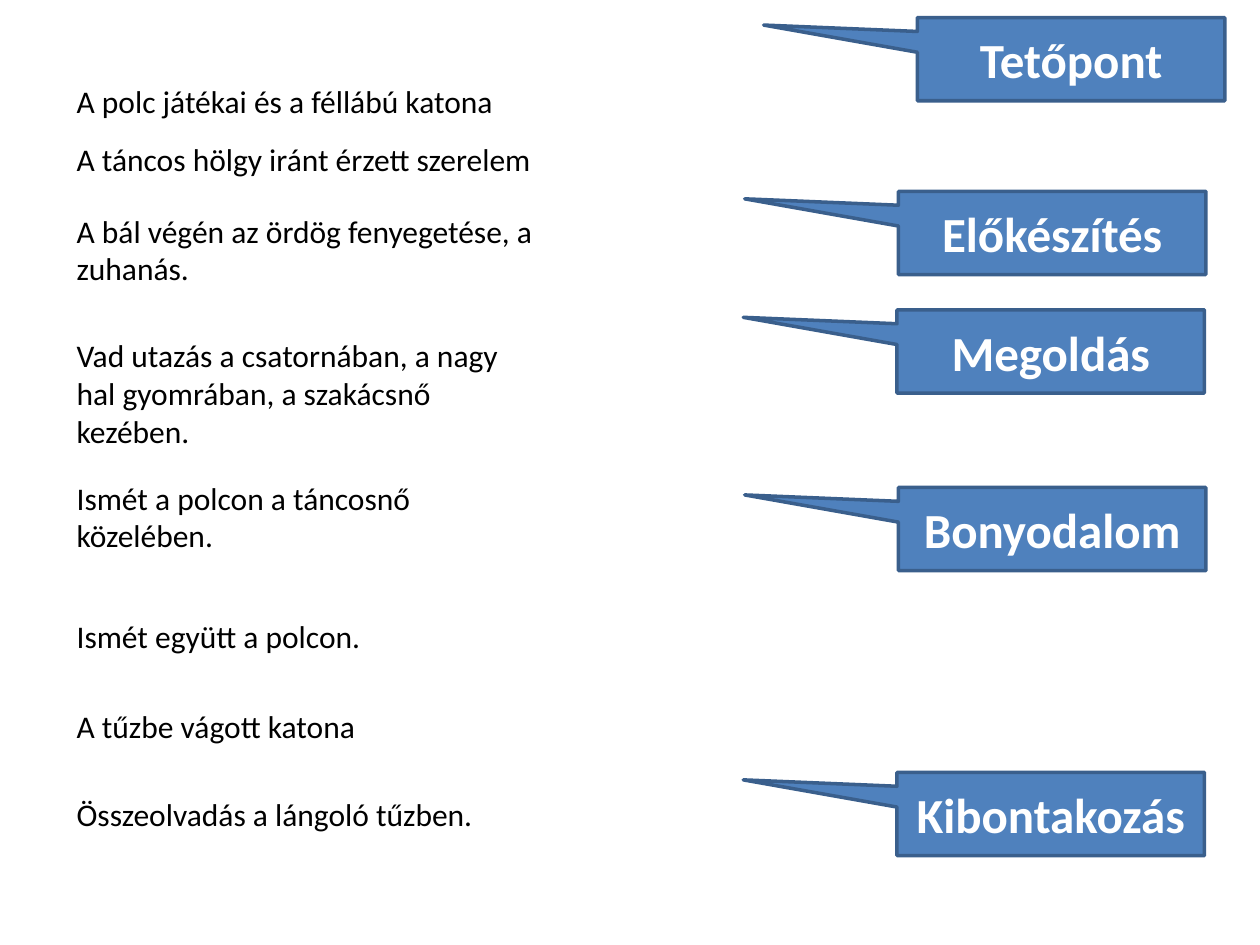
from dataclasses import dataclass

from pptx import Presentation
from pptx.dml.color import RGBColor
from pptx.enum.shapes import MSO_SHAPE
from pptx.enum.text import MSO_ANCHOR, MSO_AUTO_SIZE, PP_ALIGN
from pptx.util import Pt


@dataclass(frozen=True)
class Theme:
    """Colours, font and type sizes of the slide."""
    face: str = "Calibri"
    ink: RGBColor = RGBColor(0, 0, 0)
    pale: RGBColor = RGBColor(255, 255, 255)
    blue: RGBColor = RGBColor(0x4F, 0x81, 0xBD)
    edge: RGBColor = RGBColor(0x3A, 0x5F, 0x8C)
    body: int = 18
    label: int = 28


THEME = Theme()
EVENTS = [
    (0, 1, "A polc játékai és a féllábú katona"),
    (33.1, 1, "A táncos hölgy iránt érzett szerelem"),
    (74.2, 2, "A bál végén az ördög fenyegetése, a zuhanás."),
    (145.4, 3, "Vad utazás a csatornában, a nagy hal gyomrában, a szakácsnő kezében."),
    (226.8, 2, "Ismét a polcon a táncosnő közelében."),
    (306, 1, "Ismét együtt a polcon."),
    (357.1, 1, "A tűzbe vágott katona"),
    (407.5, 1, "Összeolvadás a lángoló tűzben."),
]
STAGES = [
    (0.8, 99.3, "Előkészítés"),
    (0.8, 268.5, "Bonyodalom"),
    (0, 431.3, "Kibontakozás"),
    (11.6, 0, "Tetőpont"),
    (0, 167, "Megoldás"),
]


def style(item, form):
    """Set each attribute of an item from a dict of format values."""
    for name, value in form.items():
        setattr(item, name, value)


def write(frame, text, font):
    """Put one formatted run into a text frame and return its paragraph."""
    para = frame.paragraphs[0]
    run = para.add_run()
    run.text = text
    style(run.font, {"name": THEME.face, "size": Pt(font["size"]), "bold": font["bold"]})
    run.font.color.rgb = font["ink"]
    return para


def add_events(slide, left, top, width):
    """Place the story events in a column."""
    font = {"size": THEME.body, "bold": False, "ink": THEME.ink}
    for down, lines, text in EVENTS:
        high = 7.2 + 21.8 * lines
        box = slide.shapes.add_textbox(Pt(left), Pt(top + down), Pt(width), Pt(high))
        style(box.text_frame, {"word_wrap": True,
                               "auto_size": MSO_AUTO_SIZE.SHAPE_TO_FIT_TEXT})
        write(box.text_frame, text, font)


def add_stages(slide, left, top, width, high):
    """Place the plot stage callouts, each pointing left."""
    font = {"size": THEME.label, "bold": True, "ink": THEME.pale}
    for right, down, text in STAGES:
        tag = slide.shapes.add_shape(MSO_SHAPE.RECTANGULAR_CALLOUT, Pt(left + right),
                                     Pt(top + down), Pt(width), Pt(high))
        tag.shadow.inherit = False
        tag.adjustments[0], tag.adjustments[1] = -1, -0.41
        tag.fill.solid()
        tag.fill.fore_color.rgb = THEME.blue
        tag.line.color.rgb = THEME.edge
        tag.line.width = Pt(2)
        style(tag.text_frame, {"word_wrap": True, "vertical_anchor": MSO_ANCHOR.MIDDLE})
        write(tag.text_frame, text, font).alignment = PP_ALIGN.CENTER


def main():
    """Build and save the slide."""
    deck = Presentation()
    style(deck, {"slide_width": Pt(720), "slide_height": Pt(540)})
    slide = deck.slides.add_slide(deck.slide_layouts[6])
    add_events(slide, 36.7, 43.2, 278)
    add_stages(slide, 512.6, 10.1, 175.7, 47.5)
    deck.save("out.pptx")


if __name__ == "__main__":
    main()
